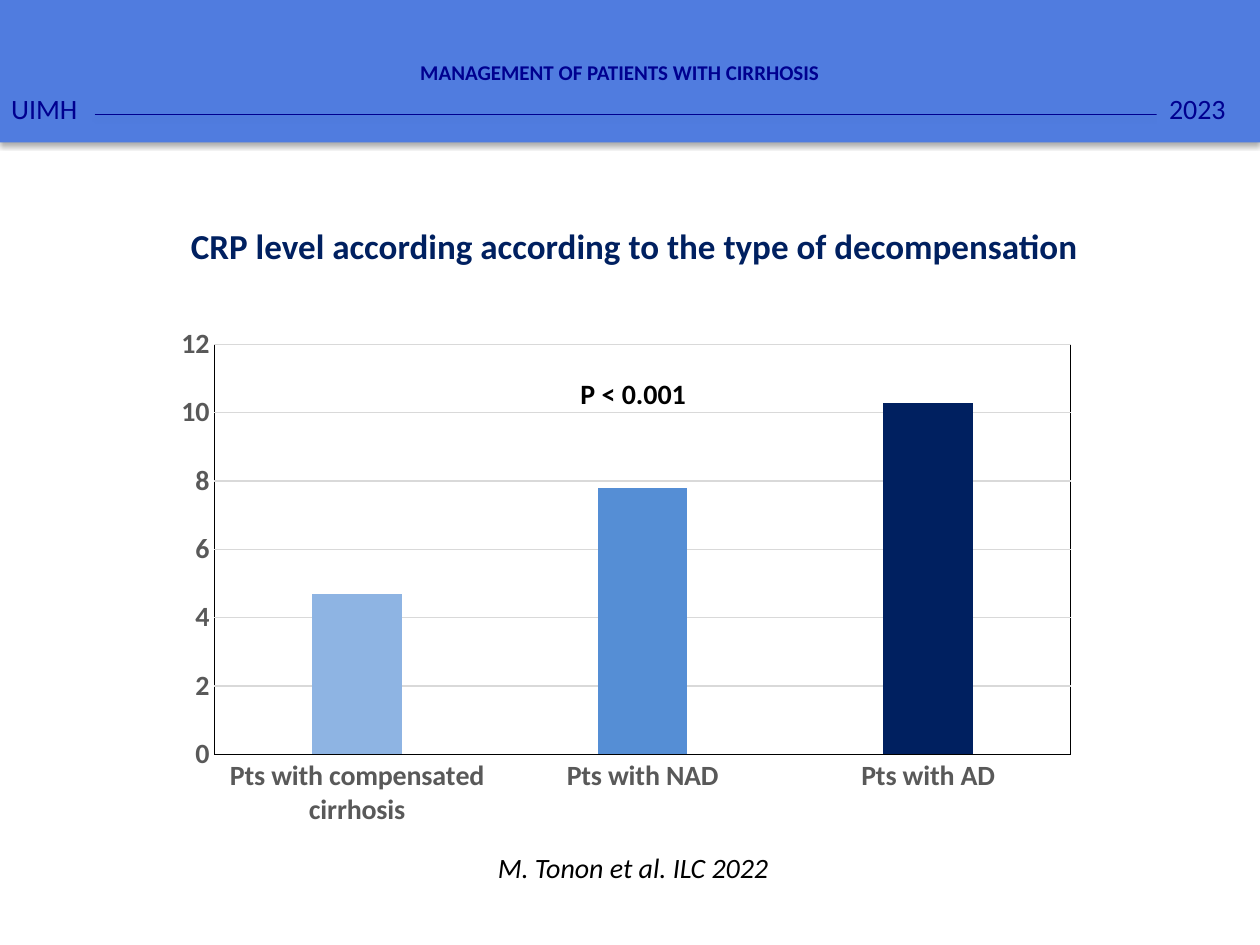
from lxml import etree
from pptx import Presentation
from pptx.chart.data import CategoryChartData
from pptx.dml.color import RGBColor
from pptx.enum import chart as ch, shapes, text
from pptx.oxml import parse_xml
from pptx.oxml.ns import nsdecls, qn
from pptx.util import Inches, Pt

FONT = "Calibri"
BAND_BLUE = RGBColor(0x50, 0x7C, 0xDF)
HEADER_INK = RGBColor(0x00, 0x00, 0x90)
NAVY = RGBColor(0x00, 0x20, 0x60)
MID_BLUE = RGBColor(0x55, 0x8E, 0xD5)
LIGHT_BLUE = RGBColor(0x8E, 0xB4, 0xE3)
AXIS_GREY = RGBColor(0x59, 0x59, 0x59)
GRID_GREY = RGBColor(0xD9, 0xD9, 0xD9)
BLACK = RGBColor(0, 0, 0)


def set_font(font, size, color, bold=False, italic=False):
    font.name, font.size = FONT, Pt(size)
    font.bold, font.italic = bold, italic
    font.color.rgb = color


def write(box, words, size, color, align=text.PP_ALIGN.CENTER,
          anchor=text.MSO_ANCHOR.TOP, **style):
    frame = box.text_frame
    frame.word_wrap = True
    frame.vertical_anchor = anchor
    para = frame.paragraphs[0]
    para.text = words
    para.alignment = align
    set_font(para.font, size, color, **style)


def add_caption(page, box, words, size, color, **style):
    write(page.shapes.add_textbox(*map(Inches, box)), words, size, color, **style)


def add_block(group, left, top, width, height):
    block = group.shapes.add_shape(
        shapes.MSO_SHAPE.RECTANGLE,
        Inches(left), Inches(top), Inches(width), Inches(height))
    block.shadow.inherit = False
    block.fill.solid()
    block.fill.fore_color.rgb = BAND_BLUE
    block.line.fill.background()
    return block


def drop_shadow(shape, opacity, blur, distance):
    """Give the shape a black shadow falling straight down."""
    properties = shape._element.spPr
    for effects in properties.findall(qn("a:effectLst")):
        properties.remove(effects)
    properties.append(parse_xml(
        f'<a:effectLst {nsdecls("a")}><a:outerShdw blurRad="{Pt(blur)}" '
        f'dist="{Pt(distance)}" dir="5400000" rotWithShape="0">'
        f'<a:srgbClr val="000000"><a:alpha val="{opacity * 1000}"/></a:srgbClr>'
        '</a:outerShdw></a:effectLst>'))


def add_header(page, left, top, width, height):
    group = page.shapes.add_group_shape()
    drop_shadow(add_block(group, left, top, width, height), 35, 3.1, 1.8)

    line_y = Inches(top + 0.94)
    rule = group.shapes.add_connector(
        shapes.MSO_CONNECTOR.STRAIGHT,
        Inches(left + 0.75), line_y, Inches(left + 9.18), line_y)
    rule.line.color.rgb = HEADER_INK
    rule.line.width = Pt(0.75)
    drop_shadow(rule, 38, 3.1, 1.6)

    for label, offset, label_width in (("2023", 9.18, 0.82), ("UIMH", -0.01, 0.73)):
        block = add_block(group, left + offset, top + 0.71, label_width, 0.37)
        write(block, label, 16, HEADER_INK, align=text.PP_ALIGN.LEFT)

    title = add_block(group, left + 0.67, top + 0.02, 8.5, 0.75)
    title.text_frame.margin_bottom = Inches(0.07)
    write(title, "MANAGEMENT OF PATIENTS WITH CIRRHOSIS", 12, HEADER_INK,
          anchor=text.MSO_ANCHOR.BOTTOM, bold=True)


def frame_plot(chart, x, y, width, height):
    """Fix the inner plot area, as fractions of the chart, and outline it."""
    plot_area = chart._chartSpace.chart.plotArea
    for layout in plot_area.findall(qn("c:layout")):
        plot_area.remove(layout)
    layout = parse_xml(f'<c:layout {nsdecls("c")}><c:manualLayout/></c:layout>')
    settings = {"layoutTarget": "inner", "xMode": "edge", "yMode": "edge",
                "x": x, "y": y, "w": width, "h": height}
    for name, value in settings.items():
        etree.SubElement(layout[0], qn(f"c:{name}")).set("val", str(value))
    plot_area.insert(0, layout)
    plot_area.append(parse_xml(
        f'<c:spPr {nsdecls("c", "a")}><a:noFill/><a:ln w="{Pt(0.75)}"><a:solidFill>'
        f'<a:srgbClr val="{BLACK}"/></a:solidFill></a:ln></c:spPr>'))


def add_crp_chart(page, left, top, width, height):
    data = CategoryChartData()
    data.categories = ["Pts with compensated cirrhosis", "Pts with NAD", "Pts with AD"]
    data.add_series("Series 1", (4.7, 7.8, 10.3))
    chart = page.shapes.add_chart(
        ch.XL_CHART_TYPE.COLUMN_CLUSTERED,
        Inches(left), Inches(top), Inches(width), Inches(height), data).chart
    chart.has_legend = chart.has_title = False
    set_font(chart.font, 10, BLACK)

    plot = chart.plots[0]
    plot.gap_width, plot.overlap = 219, -27
    plot.vary_by_categories = False
    series = plot.series[0]
    series.format.fill.solid()
    series.format.fill.fore_color.rgb = LIGHT_BLUE
    for index, color in enumerate((MID_BLUE, NAVY), start=1):
        fill = series.points[index].format.fill
        fill.solid()
        fill.fore_color.rgb = color

    for axis in (chart.category_axis, chart.value_axis):
        axis.major_tick_mark = axis.minor_tick_mark = ch.XL_TICK_MARK.NONE
        set_font(axis.tick_labels.font, 16, AXIS_GREY, bold=True)
    axis_line = chart.category_axis.format.line
    axis_line.color.rgb, axis_line.width = BLACK, Pt(0.75)

    values = chart.value_axis
    values.minimum_scale, values.maximum_scale, values.major_unit = 0, 12, 2
    values.format.line.fill.background()
    grid = values.major_gridlines.format.line
    grid.color.rgb, grid.width = GRID_GREY, Pt(0.75)
    frame_plot(chart, 0.055, 0.026, 0.91, 0.803)


def main():
    deck = Presentation()
    deck.slide_width, deck.slide_height = Inches(10), Inches(7.5)
    page = deck.slides.add_slide(deck.slide_layouts[6])
    add_header(page, 0, -0.03, 10, 1.16)
    add_caption(page, (2.31, 6.7, 5.43, 0.37), "M. Tonon et al. ILC 2022",
                16, BLACK, italic=True)
    add_caption(page, (1.06, 1.73, 7.95, 0.44),
                "CRP level according according to the type of decompensation",
                20, NAVY, bold=True)
    add_crp_chart(page, 1.29, 2.6, 7.47, 4.08)
    add_caption(page, (4, 2.94, 2.05, 0.37), "P < 0.001", 16, BLACK, bold=True)
    deck.save("out.pptx")


if __name__ == "__main__":
    main()
